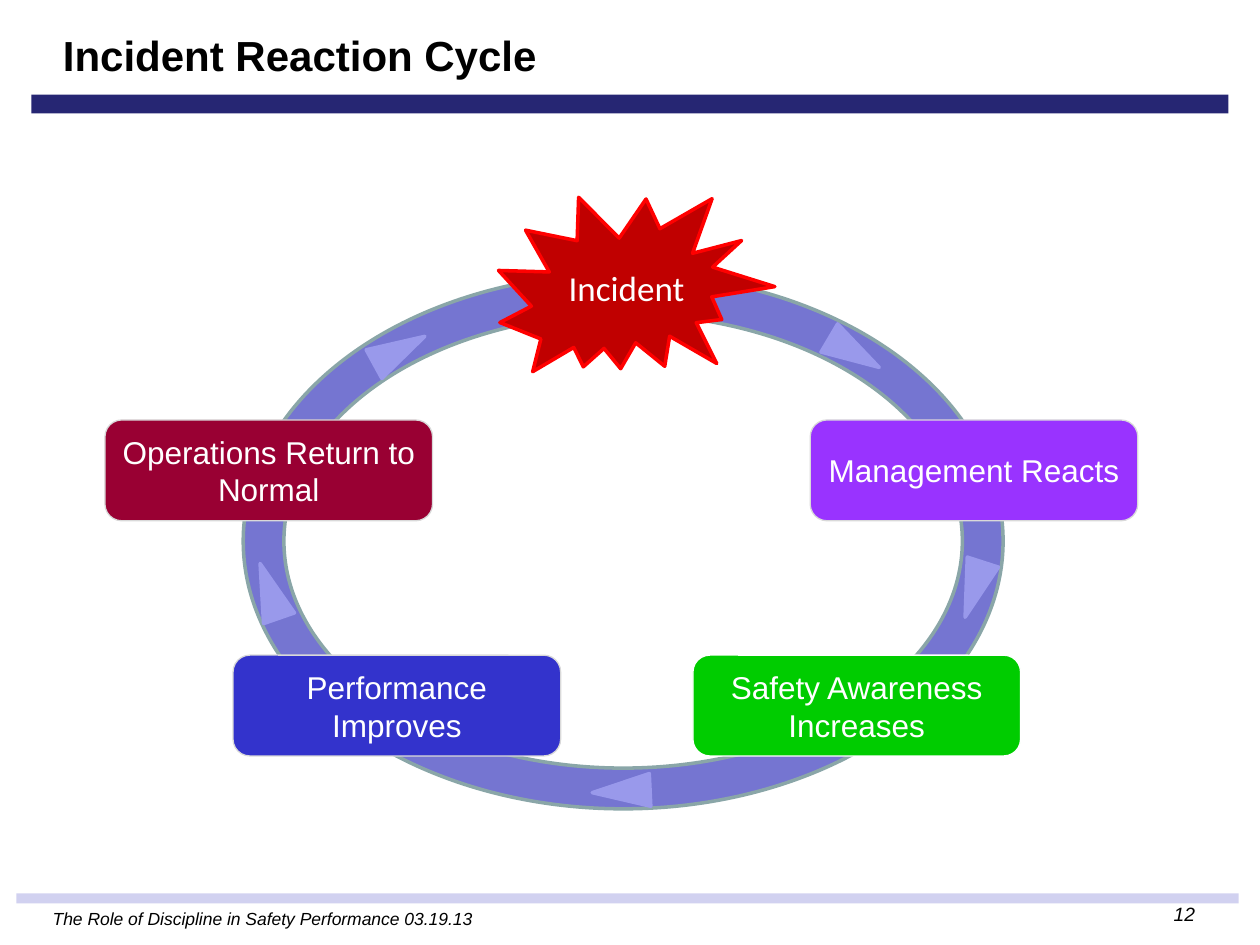
import pptx
import pptx.util
import pptx.dml.color
import pptx.enum.shapes
import pptx.enum.text

Pt = pptx.util.Pt
KIND = pptx.enum.shapes.MSO_SHAPE
ALIGN = pptx.enum.text.PP_ALIGN
ANCHOR = pptx.enum.text.MSO_ANCHOR


def color(code):
    return pptx.dml.color.RGBColor.from_string(code)


def write(frame, text, size, code="000000", font="Arial",
          align=ALIGN.LEFT, bold=False, italic=False):
    frame.word_wrap = True
    frame.vertical_anchor = ANCHOR.MIDDLE
    para = frame.paragraphs[0]
    para.alignment = align
    run = para.add_run()
    run.text = text
    run.font.name = font
    run.font.size = Pt(size)
    run.font.bold = bold
    run.font.italic = italic
    run.font.color.rgb = color(code)


def add_text(slide, box, text, size, **style):
    frame = slide.shapes.add_textbox(*map(Pt, box)).text_frame
    write(frame, text, size, **style)
    return frame


def add_form(slide, kind, box, fill, line=None, width=2, turn=0):
    form = slide.shapes.add_shape(kind, *map(Pt, box))
    form.shadow.inherit = False
    form.rotation = turn
    form.fill.solid()
    form.fill.fore_color.rgb = color(fill)
    if line:
        form.line.color.rgb = color(line)
        form.line.width = Pt(width)
    else:
        form.line.fill.background()
    return form


def add_stage(slide, left, top, text, fill, line="D9D9D9"):
    box = (left, top, 187.2, 57.6)
    form = add_form(slide, KIND.ROUNDED_RECTANGLE, box, fill, line, 0.75)
    write(form.text_frame, text, 18, code="FFFFFF", align=ALIGN.CENTER)


def add_arrow(slide, left, top, turn):
    box = (left, top, 18.7, 33.1)
    add_form(slide, KIND.ISOSCELES_TRIANGLE, box, "9999EB", "9999EB",
             turn=turn)


def main():
    deck = pptx.Presentation()
    deck.slide_width, deck.slide_height = Pt(720), Pt(540)
    slide = deck.slides.add_slide(deck.slide_layouts[6])

    # Footer, bars and title
    add_text(slide, (23, 509.8, 336, 30),
             "The Role of Discipline in Safety Performance 03.19.13", 10,
             italic=True)
    add_form(slide, KIND.RECTANGLE, (9.4, 510.5, 698.4, 5.8), "D1D1F0")
    add_form(slide, KIND.RECTANGLE, (18, 54, 684, 10.8), "262673")
    title = add_text(slide, (0, 0, 720, 62.6), "Incident Reaction Cycle", 24,
                     bold=True)
    title.margin_left = Pt(36)
    add_text(slide, (522, 509.8, 168, 25.2), "12", 11,
             align=ALIGN.RIGHT, italic=True)

    # Cycle ring
    ring = add_form(slide, KIND.DONUT, (139, 156.2, 434.2, 306),
                    "7575D1", "8AA6A8")
    ring.adjustments[0] = 0.076

    # Stages on the ring
    add_stage(slide, 60, 240, "Operations Return to Normal", "990033")
    add_stage(slide, 463, 240, "Management Reacts", "9933FF")
    add_stage(slide, 133.2, 374.4, "Performance Improves", "3333CC")
    add_stage(slide, 396, 374.4, "Safety Awareness Increases", "00CC00",
              "FFFFFF")

    # Incident burst
    add_form(slide, KIND.EXPLOSION2, (285.1, 103, 154.1, 123.8),
             "C00000", "FF0000", turn=16.4)
    add_text(slide, (316, 148.3, 84.2, 31.7), "Incident", 20,
             code="FFFFFF", font="Calibri", align=ALIGN.CENTER)

    # Direction arrows, clockwise from the incident
    for left, top, turn in ((478.8, 185, 120.6), (547.2, 320.4, 197.9),
                            (345.6, 435.6, 267.3), (144.7, 321.1, 340.9),
                            (218.9, 183.6, 61.3)):
        add_arrow(slide, left, top, turn)

    deck.save("out.pptx")


if __name__ == "__main__":
    main()
